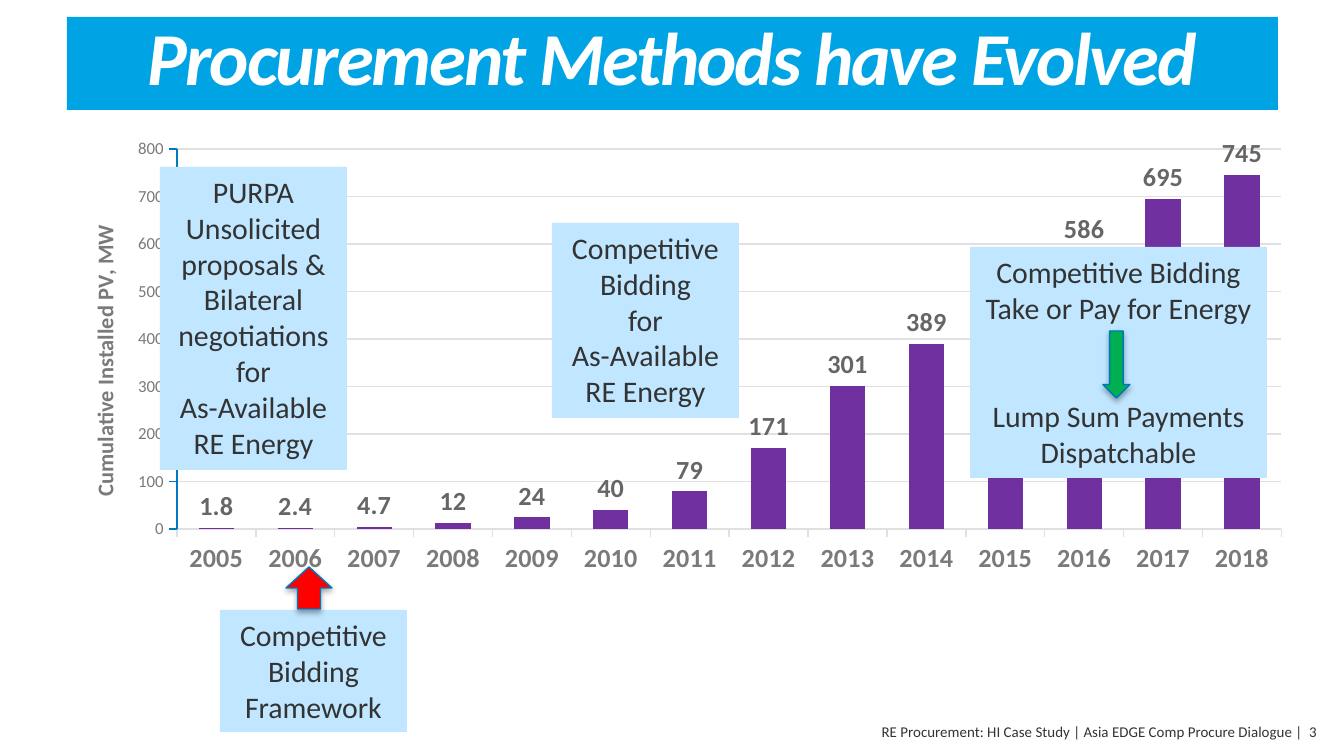
from lxml import etree
from pptx import Presentation
from pptx import util as u
from pptx.chart.data import CategoryChartData
from pptx.dml.color import RGBColor
from pptx.enum import chart as ch, shapes, text
from pptx.oxml import parse_xml
from pptx.oxml.ns import nsdecls, qn

PX = 914400 / 134.4
FONT = "Calibri"
WHITE = RGBColor(0xFF, 0xFF, 0xFF)
INK = RGBColor(0x33, 0x33, 0x33)
GRAY = RGBColor(0x7A, 0x7A, 0x7A)
LABEL = RGBColor(0x66, 0x66, 0x66)
GRID = RGBColor(0xE0, 0xE0, 0xE0)
AXIS = RGBColor(0x00, 0x79, 0xC1)
EDGE = RGBColor(0x00, 0x76, 0xBD)
SKY = RGBColor(0x00, 0xA4, 0xE4)
PALE = RGBColor(0xC0, 0xE7, 0xFF)
PURPLE = RGBColor(0x70, 0x30, 0xA0)
RED = RGBColor(0xFF, 0x00, 0x00)
GREEN = RGBColor(0x00, 0xB0, 0x50)

YEARS = [str(year) for year in range(2005, 2019)]
POWER = [1.8, 2.4, 4.7, 12, 24, 40, 79, 171, 301, 389, 487, 586, 695, 745]

# Box on the slide, then its paragraphs
NOTES = [
    ((220, 610, 187, 122), ["Competitive Bidding Framework"]),
    ((160, 167, 187, 303), ["PURPA",
                            "Unsolicited proposals & Bilateral negotiations",
                            "for", "As-Available RE Energy"]),
    ((552, 223, 187, 195), ["Competitive Bidding", "for", "As-Available",
                            "RE Energy"]),
]
TERMS = ["Competitive Bidding", "Take or Pay for Energy",
         "Lump Sum Payments", "Dispatchable"]


def emu(*sides):
    return [u.Emu(round(side * PX)) for side in sides]


def style(font, size, color, bold=False):
    font.name = FONT
    font.size = u.Pt(size)
    font.bold = bold
    font.color.rgb = color


def rule(line, color):
    line.color.rgb = color
    line.width = u.Pt(0.75)


def add_text(parent, box, lines, size=16, color=INK, fill=None,
             align=text.PP_ALIGN.CENTER):
    """Add a text box with one run per paragraph."""
    shape = parent.add_textbox(*emu(*box))
    if fill is not None:
        shape.fill.solid()
        shape.fill.fore_color.rgb = fill
    frame = shape.text_frame
    frame.word_wrap = True
    for i, line in enumerate(lines):
        para = frame.add_paragraph() if i else frame.paragraphs[0]
        para.alignment = align
        run = para.add_run()
        run.text = line
        style(run.font, size, color)
    return frame


def add_title(parent):
    frame = add_text(parent, (67, 17, 1211, 93),
                     ["Procurement Methods have Evolved"], 40, WHITE, SKY)
    frame.vertical_anchor = text.MSO_ANCHOR.MIDDLE
    para = frame.paragraphs[0]
    para.line_spacing = u.Pt(40)
    font = para.runs[0].font
    font.bold = font.italic = True
    para.runs[0]._r.get_or_add_rPr().set("spc", "-110")


def add_arrow(parent, kind, box, color):
    """Add an outlined block arrow with a soft shadow below."""
    arrow = parent.add_shape(kind, *emu(*box))
    arrow.fill.solid()
    arrow.fill.fore_color.rgb = color
    rule(arrow.line, EDGE)
    arrow._element.spPr.append(parse_xml(
        f'<a:effectLst {nsdecls("a")}>'
        '<a:outerShdw blurRad="39370" dist="22860" dir="5400000" '
        'rotWithShape="0"><a:srgbClr val="000000"><a:alpha val="35000"/>'
        '</a:srgbClr></a:outerShdw></a:effectLst>'))


def place(part, inner=False, **spots):
    """Give a chart part a fixed place, in fractions of the chart."""
    layout = part.find(qn("c:layout"))
    if layout is None:
        layout = etree.Element(qn("c:layout"))
        part.insert(0, layout)
    manual = etree.SubElement(layout, qn("c:manualLayout"))
    pairs = [("layoutTarget", "inner")] if inner else []
    pairs += [("xMode", "edge"), ("yMode", "edge"), *spots.items()]
    for name, value in pairs:
        etree.SubElement(manual, qn("c:" + name)).set("val", str(value))


def style_axes(chart):
    years, power = chart.category_axis, chart.value_axis
    for axis, size, bold, color in ((years, 14, True, GRID),
                                    (power, 9, False, AXIS)):
        axis.major_tick_mark = ch.XL_TICK_MARK.OUTSIDE
        axis.minor_tick_mark = ch.XL_TICK_MARK.NONE
        style(axis.tick_labels.font, size, GRAY, bold)
        rule(axis.format.line, color)
    years.has_major_gridlines = False
    power.minimum_scale, power.maximum_scale = 0, 800
    power.major_unit = 100
    rule(power.major_gridlines.format.line, GRID)

    title = power.axis_title
    frame = title.text_frame
    run = frame.paragraphs[0].add_run()
    run.text = "Cumulative Installed PV, MW"
    style(run.font, 12, GRAY, True)
    body = frame._txBody.bodyPr
    body.set("rot", "-5400000")
    body.set("vert", "horz")
    place(title._element, x=0.03, y=0.2)


def add_columns(parent):
    data = CategoryChartData()
    data.categories = YEARS
    data.add_series("Series 1", POWER)
    chart = parent.add_chart(ch.XL_CHART_TYPE.COLUMN_CLUSTERED,
                             *emu(48, 130, 1258, 454), data).chart
    chart.has_legend = chart.has_title = False
    style(chart.font, 10, INK)
    style_axes(chart)
    plot = chart.plots[0]
    plot.gap_width, plot.overlap = 124, -27
    plot.vary_by_categories = False
    bars = plot.series[0]
    bars.format.fill.solid()
    bars.format.fill.fore_color.rgb = PURPLE
    labels = bars.data_labels
    labels.show_value = True
    labels.position = ch.XL_LABEL_POSITION.OUTSIDE_END
    style(labels.font, 14, LABEL, True)
    area = chart._chartSpace.chart.plotArea
    place(area, inner=True, x=0.1025, y=0.042, w=0.878, h=0.837)


def add_terms(parent):
    """Group the two payment terms with the arrow between them."""
    group = parent.add_group_shape().shapes
    frame = add_text(group, (970, 247, 297, 231), TERMS, fill=PALE)
    frame.paragraphs[2].space_before = u.Pt(39)
    add_arrow(group, shapes.MSO_SHAPE.DOWN_ARROW, (1103, 331, 27, 67), GREEN)


def main():
    deck = Presentation()
    deck.slide_width, deck.slide_height = emu(1344, 756)
    parts = deck.slides.add_slide(deck.slide_layouts[6]).shapes
    add_text(parts, (839, 716, 492, 32),
             ["RE Procurement: HI Case Study | Asia EDGE Comp Procure "
              "Dialogue |  3"], 8, align=text.PP_ALIGN.RIGHT)
    add_columns(parts)
    add_title(parts)
    for box, lines in NOTES:
        add_text(parts, box, lines, fill=PALE)
    add_arrow(parts, shapes.MSO_SHAPE.UP_ARROW, (286, 567, 46, 42), RED)
    add_terms(parts)
    deck.save("out.pptx")


if __name__ == "__main__":
    main()
